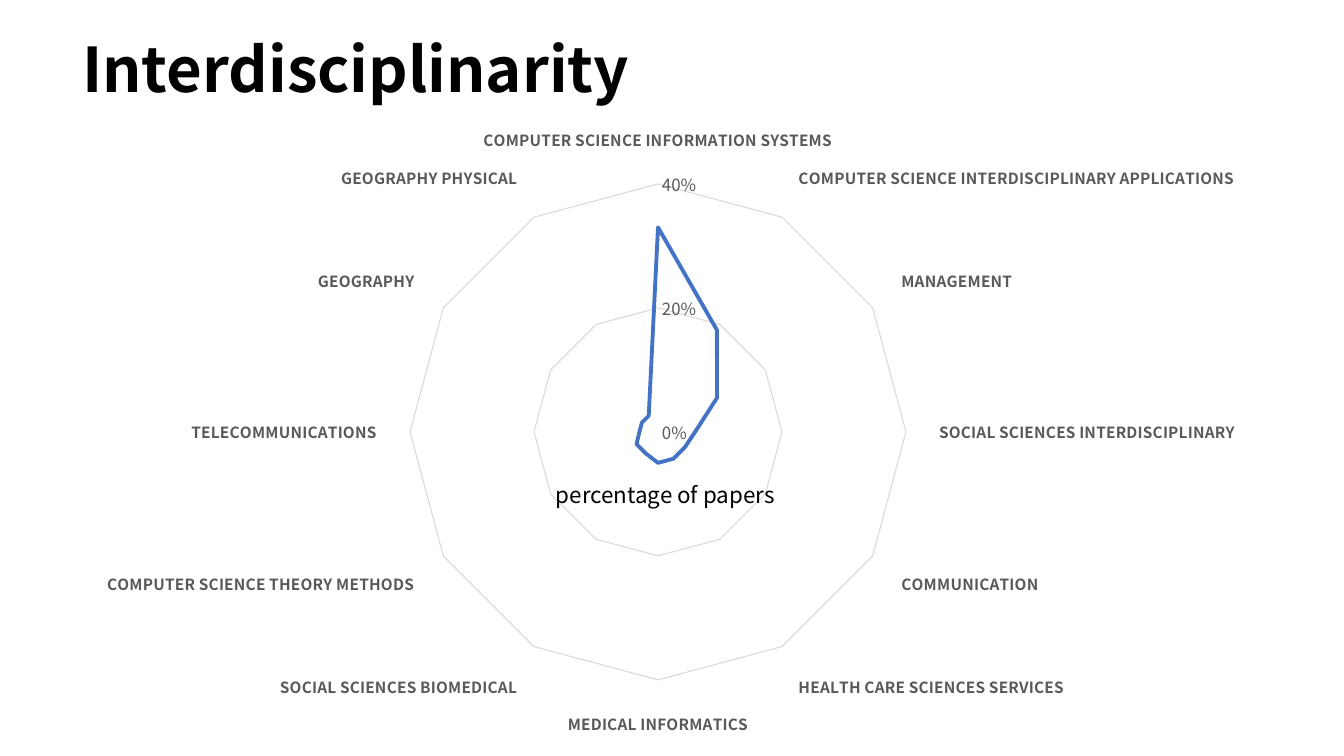
"""Build the Interdisciplinarity slide: a radar chart of paper shares by field."""
from dataclasses import dataclass

from lxml import etree
from pptx import Presentation
from pptx.chart.data import CategoryChartData
from pptx.dml.color import RGBColor
from pptx.enum.chart import XL_CHART_TYPE, XL_TICK_MARK
from pptx.enum.text import MSO_ANCHOR, MSO_AUTO_SIZE
from pptx.oxml.ns import qn
from pptx.util import Pt

RADAR = XL_CHART_TYPE.RADAR
NO_TICK = XL_TICK_MARK.NONE
MIDDLE = MSO_ANCHOR.MIDDLE
GROW = MSO_AUTO_SIZE.SHAPE_TO_FIT_TEXT

TITLE = "Interdisciplinarity"
CAPTION = "percentage of papers"
SERIES = "Series 1"
SHARES = {
    "COMPUTER SCIENCE INFORMATION SYSTEMS": 0.33,
    "COMPUTER SCIENCE INTERDISCIPLINARY APPLICATIONS": 0.19,
    "MANAGEMENT": 0.11,
    "SOCIAL SCIENCES INTERDISCIPLINARY": 0.06,
    "COMMUNICATION": 0.05,
    "HEALTH CARE SCIENCES SERVICES": 0.05,
    "MEDICAL INFORMATICS": 0.05,
    "SOCIAL SCIENCES BIOMEDICAL": 0.04,
    "COMPUTER SCIENCE THEORY METHODS": 0.04,
    "TELECOMMUNICATIONS": 0.03,
    "GEOGRAPHY": 0.03,
    "GEOGRAPHY PHYSICAL": 0.03,
}

SLIDE_W, SLIDE_H = 1344, 756
TITLE_BOX = (72, 0, 1159, 146)
CHART_BOX = (0, 107, 1344, 649)
CAPTION_BOX = (546, 476, 251, 37)
CENTER_X, CENTER_Y, RADIUS = 658, 432, 248
EMU_PER_PX = 914400 / 100.8


@dataclass(frozen=True)
class Theme:
    font: str = "Noto Sans CJK SC"
    ink: str = "000000"
    label: str = "595959"
    grid: str = "D9D9D9"
    accent: str = "4472C4"
    title_size: int = 44
    caption_size: int = 16
    value_size: int = 12
    category_size: int = 11
    chart_size: int = 10


THEME = Theme()


def px(n):
    return round(n * EMU_PER_PX)


def style_font(font, size, color=THEME.ink, bold=False):
    font.name = THEME.font
    font.size = Pt(size)
    font.bold = bold
    font.color.rgb = RGBColor.from_string(color)


def style_line(line, color, width):
    line.color.rgb = RGBColor.from_string(color)
    line.width = Pt(width)


def write(tf, text, size, bold=False, spacing=1.0):
    p = tf.paragraphs[0]
    p.line_spacing = spacing
    r = p.add_run()
    r.text = text
    style_font(r.font, size, bold=bold)


def place_plot(chart):
    left, top, width, height = CHART_BOX
    plot_area = chart.plots[0]._element.getparent()
    layout = plot_area.find(qn("c:layout"))
    if layout is None:
        layout = etree.Element(qn("c:layout"))
        plot_area.insert(0, layout)
    manual = etree.SubElement(layout, qn("c:manualLayout"))
    settings = {
        "layoutTarget": "inner",
        "xMode": "edge",
        "yMode": "edge",
        "x": round((CENTER_X - RADIUS - left) / width, 4),
        "y": round((CENTER_Y - RADIUS - top) / height, 4),
        "w": round(2 * RADIUS / width, 4),
        "h": round(2 * RADIUS / height, 4),
    }
    for tag, value in settings.items():
        etree.SubElement(manual, qn(f"c:{tag}")).set("val", str(value))


def add_radar(s):
    data = CategoryChartData(number_format="0%")
    data.categories = list(SHARES)
    data.add_series(SERIES, list(SHARES.values()))
    chart = s.shapes.add_chart(RADAR, *map(px, CHART_BOX), data).chart
    chart.has_title = False
    chart.has_legend = False
    style_font(chart.font, THEME.chart_size)
    plot = chart.plots[0]
    plot.vary_by_categories = False
    series = plot.series[0]
    series.smooth = False
    style_line(series.format.line, THEME.accent, 2.75)

    fields, shares = chart.category_axis, chart.value_axis
    for axis in (fields, shares):
        axis.major_tick_mark = axis.minor_tick_mark = NO_TICK
    fields.has_major_gridlines = False
    style_font(fields.tick_labels.font, THEME.category_size, THEME.label, True)
    style_line(fields.format.line, THEME.grid, 1)
    shares.minimum_scale, shares.maximum_scale, shares.major_unit = 0, 0.4, 0.2
    shares.tick_labels.number_format = "0%"
    shares.tick_labels.number_format_is_linked = False
    style_font(shares.tick_labels.font, THEME.value_size, THEME.label)
    shares.format.line.fill.background()
    shares.has_major_gridlines = True
    style_line(shares.major_gridlines.format.line, THEME.grid, 0.75)
    place_plot(chart)


def main():
    prs = Presentation()
    prs.slide_width, prs.slide_height = px(SLIDE_W), px(SLIDE_H)
    s = prs.slides.add_slide(prs.slide_layouts[5])
    add_radar(s)

    title = s.shapes.title
    title.left, title.top, title.width, title.height = map(px, TITLE_BOX)
    tf = title.text_frame
    tf.vertical_anchor = MIDDLE
    write(tf, TITLE, THEME.title_size, bold=True, spacing=0.9)
    tf.paragraphs[0].alignment = 1

    tf = s.shapes.add_textbox(*map(px, CAPTION_BOX)).text_frame
    tf.word_wrap = False
    tf.auto_size = GROW
    write(tf, CAPTION, THEME.caption_size)

    prs.save("out.pptx")


if __name__ == "__main__":
    main()
